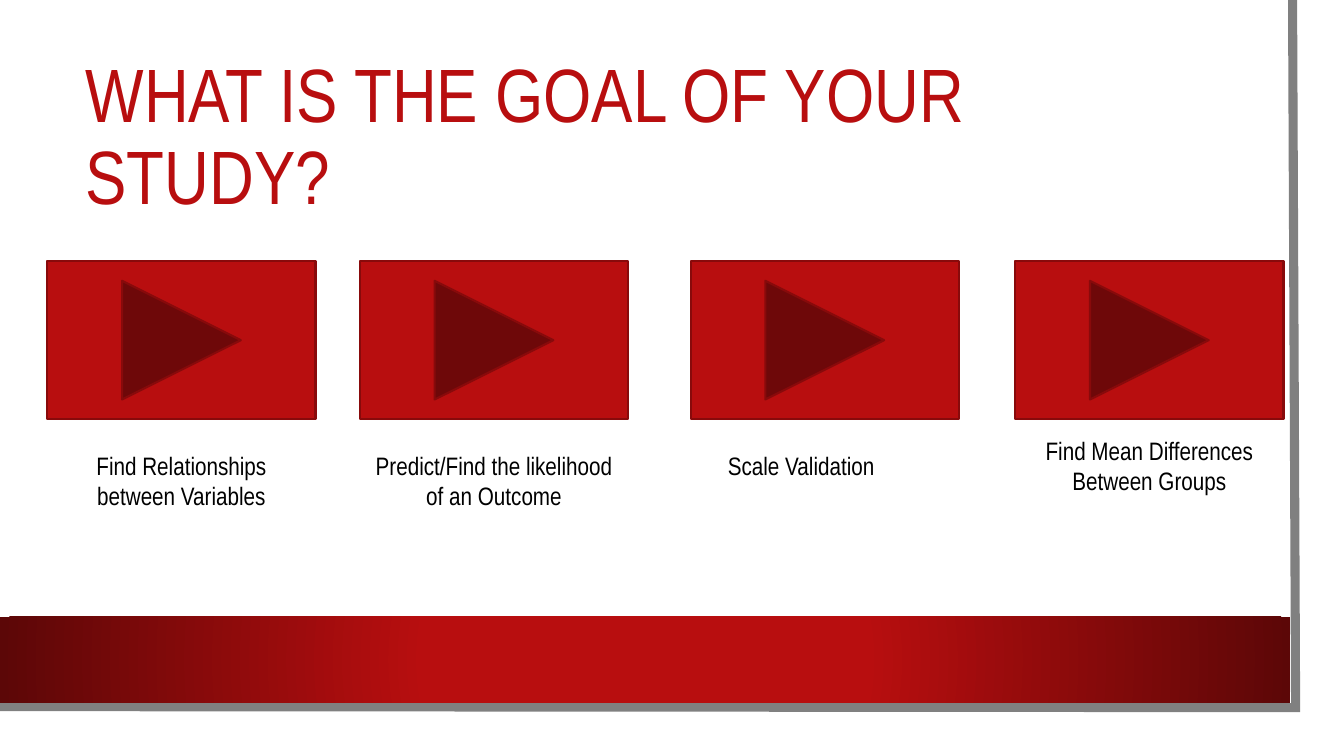
"""Builds a slide that asks for the goal of a study and offers four buttons."""
from lxml import etree
from pptx import Presentation
from pptx.dml.color import RGBColor
from pptx.enum import shapes, text
from pptx.oxml import parse_xml
from pptx.oxml.ns import nsdecls, qn
from pptx.util import Inches, Pt

TITLE = "WHAT IS THE GOAL OF YOUR STUDY?"
FONT = "Arial Narrow"
RED, DARK_RED, DEEP_RED, GRAY = "B80E0F", "880A0B", "5C0707", "808080"
CENTER, LEFT = text.PP_ALIGN.CENTER, text.PP_ALIGN.LEFT

BUTTON_TOP, BUTTON_WIDTH, BUTTON_HEIGHT = 2.59, 2.66, 1.57
GOALS = [
    dict(label="Find Relationships between Variables", left=0.47),
    dict(label="Predict/Find the likelihood of an Outcome", left=3.57, height=1.01),
    dict(label="Scale Validation", left=6.85, inset=0.27, height=0.4, align=LEFT),
    dict(label="Find Mean Differences Between Groups", left=10.07, top=4.27),
]
FRAME = [(12.82, 0), (12.85, 7.02), (-0.03, 7.01)]
BAND = (0, 6.12, 12.8, 0.85)
BAND_STOPS = [(34, RED), (100, DEEP_RED)]


def color(value):
    return RGBColor.from_string(value)


def place(shape, left, top, width, height):
    shape.left, shape.top = Inches(left), Inches(top)
    shape.width, shape.height = Inches(width), Inches(height)


def write(box, words, size=18, ink="000000", align=CENTER,
          anchor=text.MSO_ANCHOR.TOP, spacing=None):
    frame = box.text_frame
    frame.word_wrap = True
    frame.auto_size = text.MSO_AUTO_SIZE.NONE
    frame.vertical_anchor = anchor
    para = frame.paragraphs[0]
    para.alignment, para.line_spacing = align, spacing
    span = para.add_run()
    span.text = words
    span.font.name, span.font.size = FONT, Pt(size)
    span.font.color.rgb = color(ink)


def add_frame(page):
    points = [(Inches(x), Inches(y)) for x, y in FRAME]
    builder = page.shapes.build_freeform(*points[0])
    builder.add_line_segments(points[1:], close=False)
    frame = builder.convert_to_shape()
    frame.shadow.inherit = False
    frame.fill.background()
    frame.line.color.rgb = color(GRAY)
    frame.line.width = Pt(6.5)
    line = frame.element.spPr.find(qn("a:ln"))
    etree.SubElement(line, qn("a:miter"), lim="800000")


def add_band(page):
    band = page.shapes.add_shape(shapes.MSO_SHAPE.RECTANGLE, *map(Inches, BAND))
    band.shadow.inherit = False
    band.line.fill.background()
    stops = "".join(
        f'<a:gs pos="{position * 1000}"><a:srgbClr val="{value}"/></a:gs>'
        for position, value in BAND_STOPS)
    gradient = parse_xml(
        f'<a:gradFill {nsdecls("a")}><a:gsLst>{stops}</a:gsLst><a:path path="circle">'
        '<a:fillToRect l="50000" t="50000" r="50000" b="50000"/></a:path></a:gradFill>')
    band.element.spPr.find(qn("a:prstGeom")).addnext(gradient)


def add_button(page, left):
    button = page.shapes.add_shape(
        shapes.MSO_SHAPE.ACTION_BUTTON_FORWARD_OR_NEXT,
        *map(Inches, (left, BUTTON_TOP, BUTTON_WIDTH, BUTTON_HEIGHT)))
    button.shadow.inherit = False
    button.fill.solid()
    button.fill.fore_color.rgb = color(RED)
    button.line.color.rgb = color(DARK_RED)
    button.line.width = Pt(1.5)


def add_label(page, label, left, top=4.42, height=0.71, inset=0, align=CENTER):
    box = page.shapes.add_textbox(0, 0, 0, 0)
    place(box, left + inset, top, BUTTON_WIDTH - 2 * inset, height)
    write(box, label, align=align)


def main():
    deck = Presentation()
    deck.slide_width, deck.slide_height = Inches(13.33), Inches(7.5)
    page = deck.slides.add_slide(deck.slide_layouts[5])
    add_frame(page)
    add_band(page)
    title = page.shapes.title
    title.element.getparent().append(title.element)
    place(title, 0.75, 0.75, 11.37, 1.26)
    write(title, TITLE, size=54, ink=RED, align=LEFT,
          anchor=text.MSO_ANCHOR.MIDDLE, spacing=0.9)
    for goal in GOALS:
        add_button(page, goal["left"])
    for goal in GOALS:
        add_label(page, **goal)
    deck.save("out.pptx")


if __name__ == "__main__":
    main()
